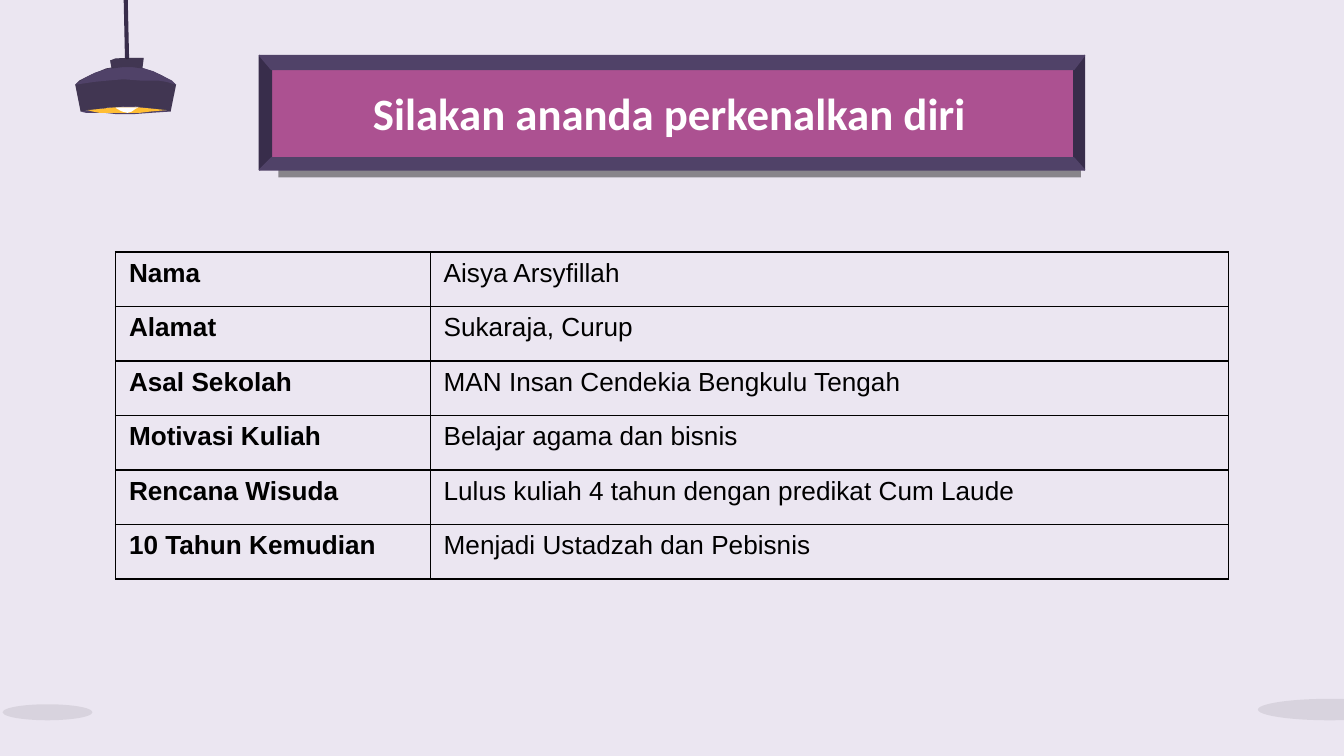
from pptx import Presentation
from pptx.dml.color import RGBColor
from pptx.enum.shapes import MSO_SHAPE as Shape
from pptx.enum.text import MSO_ANCHOR as Anchor, MSO_AUTO_SIZE as AutoSize, PP_ALIGN as Align
from pptx.oxml.ns import qn
from pptx.util import Pt
from lxml.etree import SubElement

COLORS = {
    "background": "EBE6F1", "purple": "504268", "dark": "382D4B", "pink": "AC5191",
    "glow": "FFBE34", "white": "FFFFFF", "black": "000000", "shade": "191919",
}


def rgb(name):
    return RGBColor.from_string(COLORS[name])


def add_color(parent, name, alpha=100):
    color = SubElement(parent, qn("a:srgbClr"), val=COLORS[name])
    SubElement(color, qn("a:alpha"), val=str(alpha * 1000))


class SlideBuilder:
    """Holds the style and the current slide; all lengths are in points."""

    def __init__(self, page):
        self.page = page
        page.background.fill.solid()
        page.background.fill.fore_color.rgb = rgb("background")

    def paint(self, shape, color, alpha=100, line_width=0):
        shape.shadow.inherit = False
        shape.fill.solid()
        shape.fill.fore_color.rgb = rgb(color)
        if alpha < 100:
            tint = shape._element.spPr.find(".//" + qn("a:srgbClr"))
            SubElement(tint, qn("a:alpha"), val=str(alpha * 1000))
        if line_width:
            shape.line.color.rgb = rgb(color)
            shape.line.width = Pt(line_width)
        else:
            shape.line.fill.background()
        return shape

    def outline(self, points, color, alpha=100, line_width=0):
        corners = [(Pt(x), Pt(y)) for x, y in points]
        builder = self.page.shapes.build_freeform(*corners[0])
        builder.add_line_segments(corners[1:], close=True)
        return self.paint(builder.convert_to_shape(), color, alpha, line_width)

    def ellipse(self, left, top, width, height, color, alpha):
        shape = self.page.shapes.add_shape(
            Shape.OVAL, Pt(left), Pt(top), Pt(width), Pt(height))
        return self.paint(shape, color, alpha)

    def drop_shadow(self, shape, distance, angle, alpha):
        effects = shape._element.spPr.find(qn("a:effectLst"))
        shadow = SubElement(effects, qn("a:outerShdw"), dist=str(Pt(distance)),
                            dir=str(angle * 60000), algn="ctr", rotWithShape="0")
        add_color(shadow, "black", alpha)

    def style(self, para, size, font, color, bold):
        for span in para.runs:
            span.font.size = Pt(size)
            span.font.name = font
            span.font.bold = bold
            span.font.color.rgb = rgb(color)

    def title(self, text, left, top, width, height):
        box = self.page.shapes.title
        box.left, box.top, box.width, box.height = map(Pt, (left, top, width, height))
        frame = box.text_frame
        frame.text = text
        frame.word_wrap = True
        frame.auto_size = AutoSize.NONE
        frame.vertical_anchor = Anchor.MIDDLE
        frame.margin_left = frame.margin_right = Pt(7.2)
        frame.margin_top = frame.margin_bottom = Pt(7.2)
        para = frame.paragraphs[0]
        para.alignment = Align.CENTER
        self.style(para, 24, "Calibri", "white", True)
        # Bring the title in front of the banner
        self.page.shapes._spTree.append(box._element)

    def border(self, cell, width):
        properties = cell._tc.get_or_add_tcPr()
        for side in ("lnL", "lnR", "lnT", "lnB"):
            line = SubElement(properties, qn("a:" + side), w=str(Pt(width)))
            add_color(SubElement(line, qn("a:solidFill")), "black")

    def table(self, rows, left, top, widths, row_height):
        table = self.page.shapes.add_table(
            len(rows), len(widths), Pt(left), Pt(top),
            Pt(sum(widths)), Pt(row_height * len(rows))).table
        table.first_row = table.horz_banding = False
        for column, width in zip(table.columns, widths):
            column.width = Pt(width)
        for row, texts in zip(table.rows, rows):
            row.height = Pt(row_height)
            for index, (cell, text) in enumerate(zip(row.cells, texts)):
                self.border(cell, 0.75)
                cell.fill.background()
                cell.text = text
                self.style(cell.text_frame.paragraphs[0], 14, "Arial", "black", index == 0)


deck = Presentation()
deck.slide_width, deck.slide_height = Pt(720), Pt(405)
slide = SlideBuilder(deck.slides.add_slide(deck.slide_layouts[5]))

# Hanging lamp
lamp_body = [
    (65.5, 36), (61.2, 36), (56.9, 36.7), (53.3, 38.2), (49.7, 39.6), (46.8, 41),
    (42.5, 43.2), (40.3, 45.4), (43.2, 59.8), (48.2, 59), (53.3, 58.3), (58.3, 57.6),
    (62.6, 57.6), (67, 56.9), (71.3, 56.9), (77.8, 57.6), (83.5, 58.3), (87.8, 59),
    (91.4, 59.8), (94.3, 45.4), (91.4, 43.2), (86.4, 40.3), (81.4, 38.2), (77, 36.7), (72, 36)]
lamp_rim = [
    (67, 56.9), (58.3, 57.6), (48.2, 59), (43.2, 59.8), (46.1, 60.5), (56.2, 60.5),
    (62.6, 61.2), (71.3, 61.2), (80.6, 60.5), (91.4, 59.8), (87.8, 59), (81.4, 57.6),
    (71.3, 56.9)]
lamp_glow = [
    (67.7, 57.6), (60.5, 57.6), (54.7, 58.3), (46.8, 59), (49.7, 59.8), (53.3, 60.5),
    (74.9, 60.5), (80.6, 59.8), (89.3, 59), (82.1, 58.3), (74.9, 57.6)]
lamp_cap = [
    (68.4, 31), (61.9, 31.3), (59, 32.4), (59.8, 36.7), (65.5, 36), (71.3, 36),
    (76.3, 36.7), (77, 31)]
lamp_cord = [(67, 0), (67.7, 31), (68.4, 31), (67.7, 0)]
lamp_bulb = [
    (61.9, 57.6), (62.6, 58.3), (65.5, 59.8), (68.4, 60.5), (70.6, 59.8), (72.7, 58.3),
    (74.2, 57.6)]
lamp_top = [
    (66.2, 36), (61.2, 36), (56.2, 37.4), (51.1, 38.9), (45.4, 41.8), (40.3, 45.4),
    (50.4, 43.9), (57.6, 43.2), (66.2, 42.5), (75.6, 43.2), (85, 43.2), (89.3, 43.9),
    (94.3, 45.4), (92.2, 43.2), (87.8, 41), (82.1, 38.2), (74.9, 36), (70.6, 36)]
for points, color, alpha, line_width in [
    (lamp_body, "purple", 100, 0), (lamp_rim, "purple", 100, 0),
    (lamp_glow, "glow", 100, 0), (lamp_cap, "purple", 100, 0),
    (lamp_cord, "dark", 100, 1.5), (lamp_bulb, "white", 100, 0),
    (lamp_body, "shade", 27, 0), (lamp_top, "purple", 100, 0),
    (lamp_cap, "shade", 27, 0),
]:
    slide.outline(points, color, alpha, line_width)

# Floor shadows
slide.ellipse(1.4, 377.3, 48.2, 8.6, "black", 8)
slide.ellipse(673.9, 374.4, 77, 11.5, "black", 8)

# Bevelled banner: the frame runs between the outer and inner corners
outer = [(139, 29.7), (581, 29.7), (581, 91), (139, 91)]
inner = [(145.4, 37.2), (575.3, 37.2), (575.3, 84.6), (145.4, 84.6)]
panel = slide.outline(inner, "pink")
slide.drop_shadow(panel, 11.2, 70, 41)
for side, color in [(3, "dark"), (1, "dark"), (2, "purple"), (0, "purple")]:
    following = (side + 1) % 4
    slide.outline([outer[side], outer[following], inner[following], inner[side]],
                  color, line_width=0.75)
slide.title("Silakan ananda perkenalkan diri", 139, 42.5, 439.2, 36)

# Introduction table
slide.table([
    ("Nama", "Aisya Arsyfillah"),
    ("Alamat", "Sukaraja, Curup"),
    ("Asal Sekolah", "MAN Insan Cendekia Bengkulu Tengah"),
    ("Motivasi Kuliah", "Belajar agama dan bisnis"),
    ("Rencana Wisuda", "Lulus kuliah 4 tahun dengan predikat Cum Laude"),
    ("10 Tahun Kemudian", "Menjadi Ustadzah dan Pebisnis"),
], 61.9, 135, (168.6, 427.6), 29.2)

deck.save("out.pptx")
